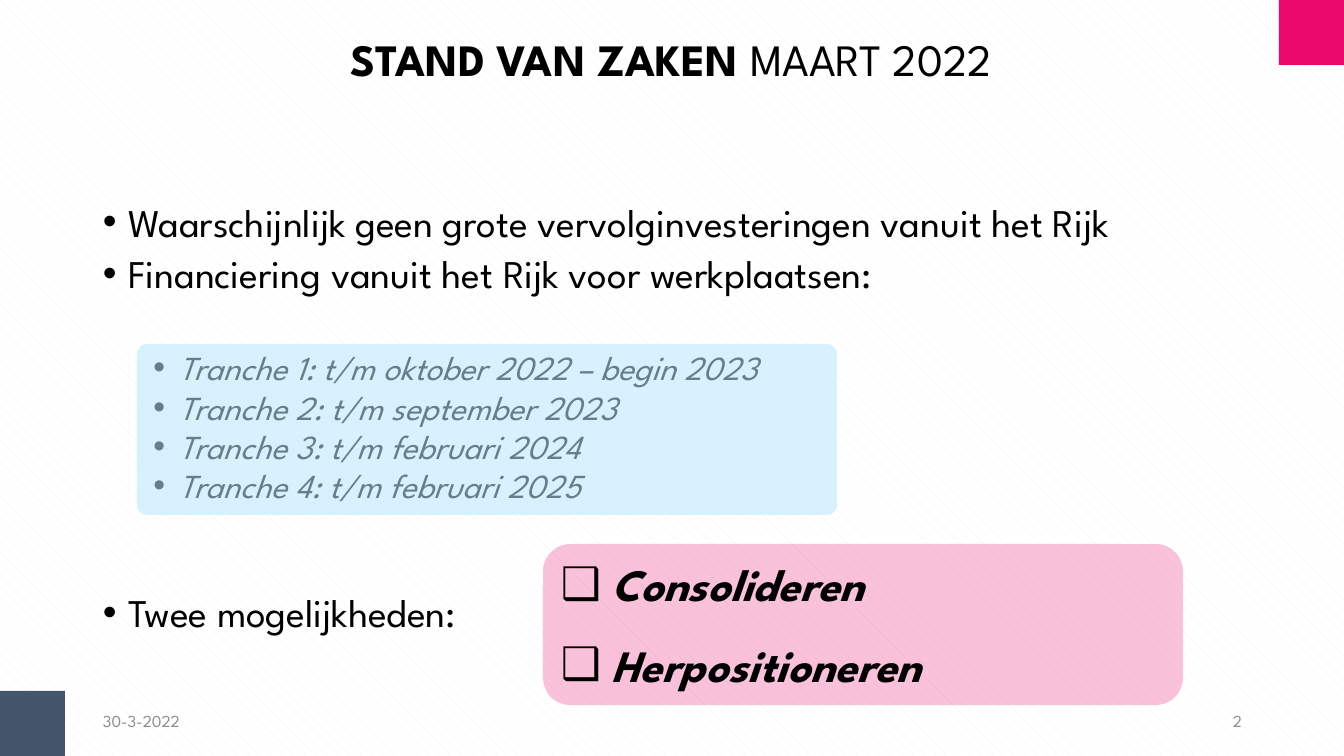
from lxml import etree
from pptx import Presentation
from pptx import util as u
from pptx.dml.color import RGBColor
from pptx.enum import dml, shapes, text
from pptx.oxml.ns import qn

WIDTH, HEIGHT = 1344, 756
SCALE = 12192000 / WIDTH
FONT = "League Spartan"
BLACK, GREY, PINK, NAVY, SKY = "000000", "8C8C8C", "EC096D", "44546A", "B9E7FF"
CORNER = 65


def px(length):
    return u.Emu(round(length * SCALE))


def color(value):
    return RGBColor.from_string(value)


def apply(target, values):
    for name, value in values.items():
        setattr(target, name, value)


class SlideBuilder:
    def __init__(self, presentation):
        self.slide = presentation.slides.add_slide(presentation.slide_layouts[6])

    def background(self, foreground, back):
        fill = self.slide.background.fill
        fill.patterned()
        fill.pattern = dml.MSO_PATTERN.SHINGLE
        fill.fore_color.rgb = color(foreground)
        fill.back_color.rgb = color(back)

    def panel(self, box, fill, opacity=100, radius=None):
        kinds = shapes.MSO_SHAPE
        kind = kinds.RECTANGLE if radius is None else kinds.ROUNDED_RECTANGLE
        shape = self.slide.shapes.add_shape(kind, *map(px, box))
        shape.shadow.inherit = False
        shape.line.fill.background()
        shape.fill.solid()
        shape.fill.fore_color.rgb = color(fill)
        if radius is not None:
            shape.adjustments[0] = radius
        if opacity < 100:
            tint = shape.fill._xPr.find(qn("a:solidFill"))[0]
            etree.SubElement(tint, qn("a:alpha"), val=str(opacity * 1000))
        return shape

    def textbox(self, box, **frame_format):
        shape = self.slide.shapes.add_textbox(*map(px, box))
        apply(shape.text_frame, {"word_wrap": True, **frame_format})
        return shape

    def paragraph(self, shape, runs, size, ink=BLACK, bullet=None, margin=0, hanging=0,
                  italic=False, **paragraph_format):
        frame = shape.text_frame
        paragraph = frame.paragraphs[0]
        if paragraph.runs:
            paragraph = frame.add_paragraph()
        apply(paragraph, {"alignment": text.PP_ALIGN.LEFT, **paragraph_format})
        for words, bold in runs:
            run = paragraph.add_run()
            run.text = words
            apply(run.font, {"name": FONT, "size": u.Pt(size), "bold": bold, "italic": italic})
            run.font.color.rgb = color(ink)
        if bullet:
            properties = paragraph._p.get_or_add_pPr()
            properties.set("marL", str(u.Inches(margin)))
            properties.set("indent", str(-u.Inches(hanging)))
            etree.SubElement(properties, qn("a:buFont"), typeface="Arial")
            etree.SubElement(properties, qn("a:buChar"), char=bullet)


def add_body(builder):
    body = builder.textbox((93, 202, 1159, 480))
    main = {"size": 28, "margin": 0.25, "italic": False}
    tranche = {"size": 24, "margin": 0.75, "italic": True}
    for words, style, before in (
        ("Waarschijnlijk geen grote vervolginvesteringen vanuit het Rijk", main, 10),
        ("Financiering vanuit het Rijk voor werkplaatsen:", main, 10),
        ("Tranche 1: t/m oktober 2022 – begin 2023", tranche, 42),
        ("Tranche 2: t/m september 2023", tranche, 5),
        ("Tranche 3: t/m februari 2024", tranche, 5),
        ("Tranche 4: t/m februari 2025", tranche, 5),
        ("Twee mogelijkheden:", main, 66),
    ):
        builder.paragraph(body, [(words, False)], bullet="•", hanging=0.25,
                          line_spacing=0.8, space_before=u.Pt(before), **style)


def add_footer(builder):
    for left, words, alignment in (
        (93, "30-3-2022", text.PP_ALIGN.LEFT),
        (950, "2", text.PP_ALIGN.RIGHT),
    ):
        footer = builder.textbox((left, 701, 302, 40),
                                 vertical_anchor=text.MSO_ANCHOR.MIDDLE)
        builder.paragraph(footer, [(words, False)], 12, GREY, alignment=alignment)


def add_title(builder):
    margins = dict.fromkeys(("margin_left", "margin_top", "margin_right", "margin_bottom"), 0)
    title = builder.textbox((161, 32, 1021, 54),
                            vertical_anchor=text.MSO_ANCHOR.MIDDLE, **margins)
    builder.paragraph(title, [("STAND VAN ZAKEN ", True), ("MAART 2022", False)], 32,
                      alignment=text.PP_ALIGN.CENTER)


def add_options(builder):
    options = builder.panel((543, 544, 640, 161), PINK, opacity=25, radius=0.17)
    apply(options.text_frame, {"word_wrap": True, "vertical_anchor": text.MSO_ANCHOR.TOP})
    for words, before in (("Consolideren", 0), ("Herpositioneren", 19)):
        builder.paragraph(options, [(words, True)], 32, bullet="❑", margin=0.5,
                          hanging=0.5, italic=True, space_before=u.Pt(before))


def main():
    presentation = Presentation()
    apply(presentation, {"slide_width": px(WIDTH), "slide_height": px(HEIGHT)})
    builder = SlideBuilder(presentation)
    builder.background("F2F2F2", "FFFFFF")
    add_body(builder)
    builder.panel((137, 344, 700, 171), SKY, opacity=55, radius=0.06)
    add_footer(builder)
    add_title(builder)
    builder.panel((WIDTH - CORNER, 0, CORNER, CORNER), PINK)
    builder.panel((0, HEIGHT - CORNER, CORNER, CORNER), NAVY)
    add_options(builder)
    presentation.save("out.pptx")


if __name__ == "__main__":
    main()
